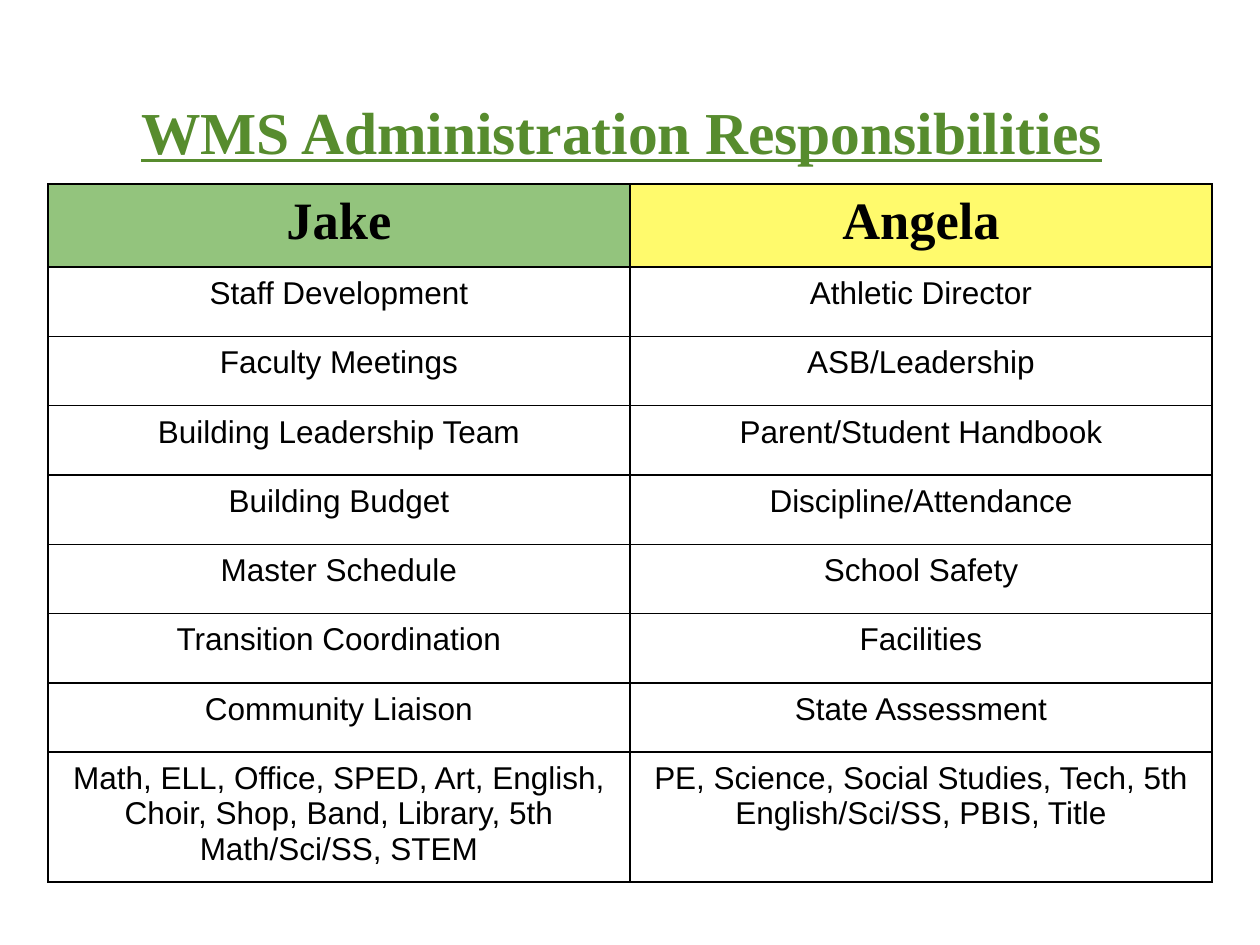
from dataclasses import dataclass

from lxml import etree
from pptx import Presentation
from pptx.dml.color import RGBColor
from pptx.enum.text import MSO_ANCHOR, MSO_AUTO_SIZE, PP_ALIGN
from pptx.oxml.ns import qn
from pptx.util import Inches, Pt

CENTER = PP_ALIGN.CENTER
MIDDLE = MSO_ANCHOR.MIDDLE
TOP = MSO_ANCHOR.TOP
NO_FIT = MSO_AUTO_SIZE.NONE
TITLE_ONLY = 5


@dataclass(frozen=True)
class Theme:
    green: str = "578C2E"
    ink: str = "000000"
    heads: tuple = ("93C47D", "FFFA6C")
    serif: str = "Times New Roman"
    sans: str = "Arial"
    title: int = 34
    head: int = 30
    body: int = 18
    rule: int = 1


class Deck:
    def __init__(self, theme):
        self.theme = theme
        self.prs = Presentation()
        self.prs.slide_width = Inches(10)
        self.prs.slide_height = Inches(7.5)
        self.slide = self.prs.slides.add_slide(self.prs.slide_layouts[TITLE_ONLY])

    def text(self, frame, words, font, size, color, bold=False, under=False):
        para = frame.paragraphs[0]
        para.alignment = CENTER
        run = para.add_run()
        run.text = words
        run.font.name = font
        run.font.size = Pt(size)
        run.font.bold = bold
        run.font.underline = under
        run.font.color.rgb = RGBColor.from_string(color)

    def title(self, words, left, top, width, height):
        box = self.slide.shapes.title
        box.left, box.top = Inches(left), Inches(top)
        box.width, box.height = Inches(width), Inches(height)
        frame = box.text_frame
        frame.word_wrap = True
        frame.auto_size = NO_FIT
        frame.vertical_anchor = MIDDLE
        frame.margin_left = frame.margin_right = Inches(0.1)
        frame.margin_top = frame.margin_bottom = Inches(0.1)
        look = self.theme
        self.text(frame, words, look.serif, look.title, look.green, True, True)

    def border(self, cell):
        props = cell._tc.get_or_add_tcPr()
        for side in ("a:lnL", "a:lnR", "a:lnT", "a:lnB"):
            line = etree.SubElement(props, qn(side), w=str(Pt(self.theme.rule)))
            fill = etree.SubElement(line, qn("a:solidFill"))
            etree.SubElement(fill, qn("a:srgbClr"), val=self.theme.ink)

    def cell(self, cell, words, fill=None):
        look = self.theme
        cell.margin_left = cell.margin_right = Inches(0.07)
        cell.margin_top = cell.margin_bottom = Inches(0.07)
        cell.vertical_anchor = TOP
        self.border(cell)
        if fill:
            cell.fill.solid()
            cell.fill.fore_color.rgb = RGBColor.from_string(fill)
            self.text(cell.text_frame, words, look.serif, look.head, look.ink, True)
        else:
            cell.fill.background()
            self.text(cell.text_frame, words, look.sans, look.body, look.ink)

    def table(self, rows, left, top, width, heights):
        count = len(rows[0])
        shape = self.slide.shapes.add_table(
            len(rows), count, Inches(left), Inches(top),
            Inches(width), Inches(sum(heights)))
        grid = shape.table
        grid.horz_banding = False
        for col in grid.columns:
            col.width = Inches(width / count)
        for i, (row, height) in enumerate(zip(rows, heights)):
            grid.rows[i].height = Inches(height)
            for j, words in enumerate(row):
                fill = self.theme.heads[j] if i == 0 else None
                self.cell(grid.cell(i, j), words, fill)


DUTIES = [
    ("Jake", "Angela"),
    ("Staff Development", "Athletic Director"),
    ("Faculty Meetings", "ASB/Leadership"),
    ("Building Leadership Team", "Parent/Student Handbook"),
    ("Building Budget", "Discipline/Attendance"),
    ("Master Schedule", "School Safety"),
    ("Transition Coordination", "Facilities"),
    ("Community Liaison", "State Assessment"),
    ("Math, ELL, Office, SPED, Art, English, Choir, Shop, Band, Library, "
     "5th Math/Sci/SS, STEM",
     "PE, Science, Social Studies, Tech, 5th English/Sci/SS, PBIS, Title"),
]


def main():
    deck = Deck(Theme())
    # Heading
    deck.title("WMS Administration Responsibilities", 0, 0.32, 9.87, 1.43)
    # Duties: tall head row, even middle rows, tall last row
    heights = [0.66] + [0.55] * (len(DUTIES) - 2) + [1.03]
    deck.table(DUTIES, 0.38, 1.46, 9.24, heights)
    deck.prs.save("out.pptx")


if __name__ == "__main__":
    main()
